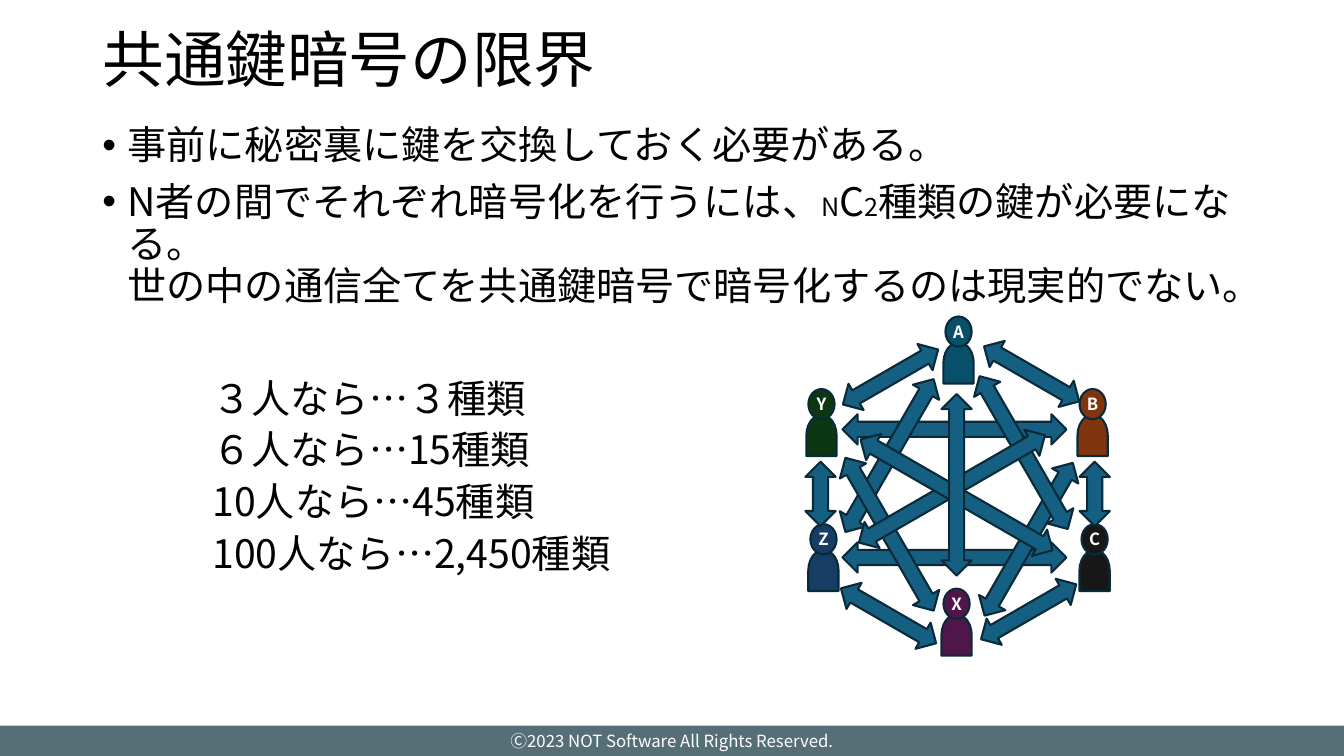
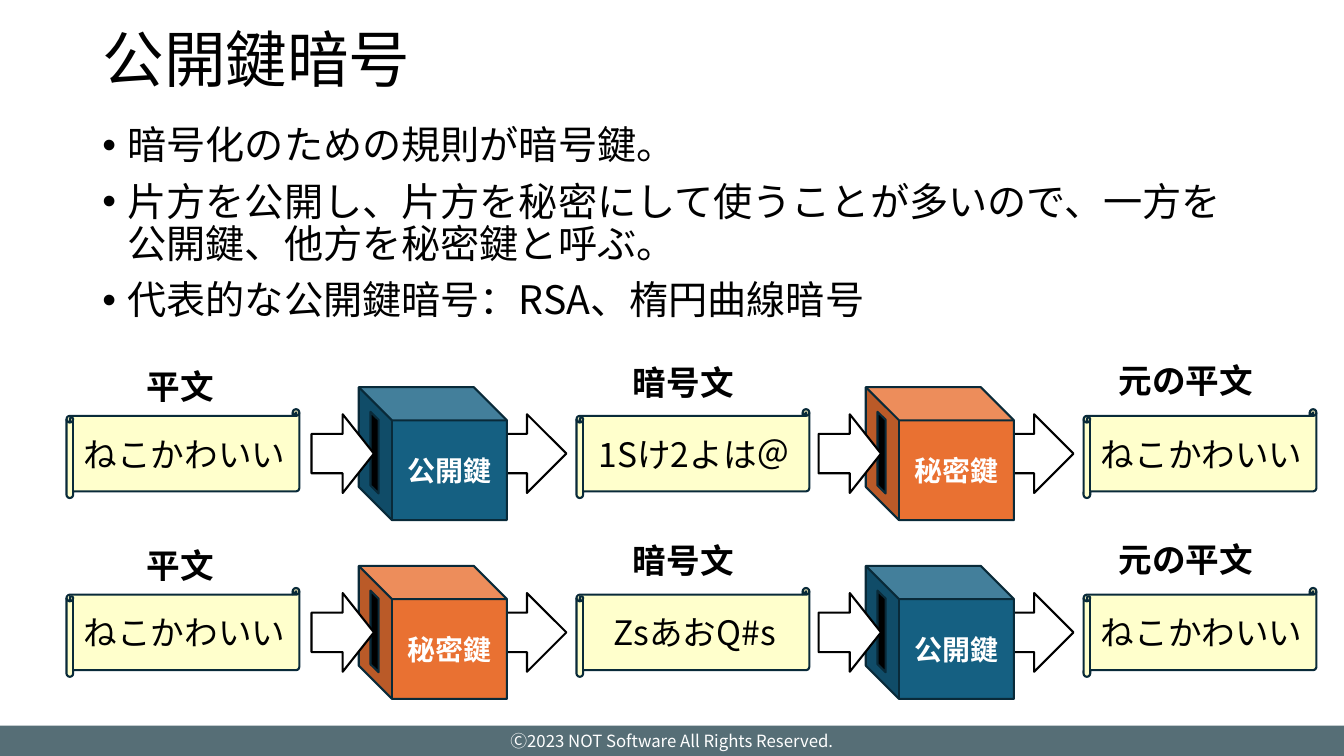
"""Build two slides on the limits of shared-key and the idea of public-key cryptography."""
from lxml import etree
from pptx import Presentation
from pptx.dml.color import RGBColor
from pptx.enum.shapes import MSO_SHAPE
from pptx.enum.text import MSO_ANCHOR, MSO_AUTO_SIZE, PP_ALIGN
from pptx.oxml.ns import qn
from pptx.util import Pt

RECTANGLE, OVAL, CUBE = MSO_SHAPE.RECTANGLE, MSO_SHAPE.OVAL, MSO_SHAPE.CUBE
DELAY, SCROLL = MSO_SHAPE.FLOWCHART_DELAY, MSO_SHAPE.HORIZONTAL_SCROLL
SLOT, RIGHT_ARROW = MSO_SHAPE.PARALLELOGRAM, MSO_SHAPE.RIGHT_ARROW
DOUBLE_ARROW = MSO_SHAPE.LEFT_RIGHT_ARROW
LEFT, CENTER = PP_ALIGN.LEFT, PP_ALIGN.CENTER
TOP, MIDDLE = MSO_ANCHOR.TOP, MSO_ANCHOR.MIDDLE
NO_AUTOFIT = MSO_AUTO_SIZE.NONE

FONT = "Noto Sans CJK JP"
COLORS = {
    "black": "000000", "white": "FFFFFF", "band": "566E76", "outline": "092A39",
    "paper": "FFFFCC", "blue": "156082", "orange": "E97132",
    "teal": "084F6A", "purple": "501649", "green": "0D3612",
    "navy": "163E64", "charcoal": "171717", "brown": "80350E",
}
SLIDE_WIDTH, SLIDE_HEIGHT, BAND_HEIGHT = 960, 540, 21.6
FOOTER = "Ⓒ2023 NOT Software All Rights Reserved."

LIMIT_TITLE = "共通鍵暗号の限界"
LIMIT_BULLETS = [
    "事前に秘密裏に鍵を交換しておく必要がある。",
    [("N者の間でそれぞれ暗号化を行うには、", 28), ("N", 18), ("C", 28), ("2", 18),
     ("種類の鍵が必要になる。\n世の中の通信全てを共通鍵暗号で暗号化するのは現実的でない。", 28)],
]
KEY_COUNTS = ["３人なら…３種類", "６人なら…15種類", "10人なら…45種類", "100人なら…2,450種類"]
PEOPLE = [
    ("A", "teal", 684.7, 236.9), ("X", "purple", 683.3, 431.3),
    ("Y", "green", 586.8, 288.7), ("Z", "navy", 588.2, 385.2),
    ("C", "charcoal", 781.9, 385.2), ("B", "brown", 780.5, 288.7),
]
KEY_ARROWS = [
    (681.8, 306.7, 160, 0), (681.8, 398.2, 160, 0),
    (635.4, 325.4, 126, 300), (734.8, 385.2, 126, 300),
    (731.2, 323.3, 126, 60), (635.4, 381.6, 126, 60),
    (736.9, 267.1, 78.5, 30), (634.7, 439.9, 78.5, 30), (636.1, 269.3, 78.5, 330),
    (781.9, 352.8, 46, 90), (586.1, 352.8, 46, 90),
    (680, 349.2, 153.4, 330), (683.3, 353.5, 158.4, 30),
    (683.3, 346.3, 129.6, 90), (734.8, 437, 78.5, 330),
]

PUBLIC_TITLE = "公開鍵暗号"
PUBLIC_BULLETS = [
    "暗号化のための規則が暗号鍵。",
    "片方を公開し、片方を秘密にして使うことが多いので、一方を公開鍵、他方を秘密鍵と呼ぶ。",
    "代表的な公開鍵暗号：RSA、楕円曲線暗号",
]
KEY_COLORS = {"公開鍵": "blue", "秘密鍵": "orange"}
FLOWS = [
    (["ねこかわいい", "1Sけ2よは＠", "ねこかわいい"], ["公開鍵", "秘密鍵"]),
    (["ねこかわいい", "ZsあおQ#s", "ねこかわいい"], ["秘密鍵", "公開鍵"]),
]
STAGE_LABELS = [("平文", 97.9, 257.8, 90.7), ("暗号文", 445, 254.7, 90.7),
                ("元の平文", 792, 253.6, 117.4)]
SCROLL_LEFTS = [47.5, 411.8, 774]
MACHINE_LEFTS = [256.3, 618.5]
FLOW_TOP, FLOW_PITCH = 276.5, 127.7


def rgb(name):
    return RGBColor.from_string(COLORS[name])


def write_text(shape, paragraphs, size=28, color="black", bold=False, align=LEFT,
               anchor=TOP, wrap=True, line_spacing=None, space_before=0, bullet=False):
    """Fill a shape with paragraphs, each a string or a list of (text, size) runs."""
    frame = shape.text_frame
    frame.auto_size, frame.word_wrap, frame.vertical_anchor = NO_AUTOFIT, wrap, anchor
    for index, content in enumerate(paragraphs):
        paragraph = frame.add_paragraph() if index else frame.paragraphs[0]
        paragraph.alignment = align
        if line_spacing:
            paragraph.line_spacing = line_spacing
        paragraph.space_before = Pt(space_before if index else 0)
        if bullet:
            properties = paragraph._p.get_or_add_pPr()
            properties.set("marL", str(Pt(18)))
            properties.set("indent", str(-Pt(18)))
            etree.SubElement(properties, qn("a:buFont")).set("typeface", "Arial")
            etree.SubElement(properties, qn("a:buChar")).set("char", "•")
        runs = [(content, size)] if isinstance(content, str) else content
        for text, run_size in runs:
            for line_number, line in enumerate(text.split("\n")):
                if line_number:
                    paragraph.add_line_break()
                run = paragraph.add_run()
                run.text = line
                font = run.font
                font.size, font.bold, font.name = Pt(run_size), bold, FONT
                font.color.rgb = rgb(color)
                etree.SubElement(run._r.get_or_add_rPr(), qn("a:ea")).set("typeface", FONT)


def add_box(shapes, kind, left, top, width, height, fill, line="outline",
            rotation=0, adjustment=None):
    shape = shapes.add_shape(kind, Pt(left), Pt(top), Pt(width), Pt(height))
    shape.shadow.inherit = False
    shape.fill.solid()
    shape.fill.fore_color.rgb = rgb(fill)
    if line:
        shape.line.color.rgb = rgb(line)
        shape.line.width = Pt(1.5)
    else:
        shape.line.fill.background()
    shape.rotation = rotation
    if adjustment is not None:
        shape.adjustments[0] = adjustment
    return shape


def add_centered(shapes, kind, x, y, width, height, fill, **options):
    return add_box(shapes, kind, x - width / 2, y - height / 2, width, height, fill, **options)


def add_text_box(slide, left, top, width, height, paragraphs, **text_format):
    box = slide.shapes.add_textbox(Pt(left), Pt(top), Pt(width), Pt(height))
    write_text(box, paragraphs, **text_format)


def add_content_slide(presentation, title, bullets, body_height):
    slide = presentation.slides.add_slide(presentation.slide_layouts[5])
    heading = slide.shapes.title
    heading.left, heading.top, heading.width, heading.height = Pt(66), Pt(15.8), Pt(828), Pt(57.6)
    write_text(heading, [title], size=44, anchor=MIDDLE, line_spacing=0.9)
    add_text_box(slide, 66, 86.4, 828, body_height, bullets,
                 line_spacing=0.9, space_before=10, bullet=True)
    return slide


def add_master_footer(presentation, slide):
    """Make the footer band and hand it to the master that all slides share."""
    band = add_box(slide.shapes, RECTANGLE, 0, SLIDE_HEIGHT - BAND_HEIGHT,
                   SLIDE_WIDTH, BAND_HEIGHT, "band", line=None)
    write_text(band, [FOOTER], size=12, color="white", align=CENTER, anchor=MIDDLE, wrap=False)
    band.element.nvSpPr.cNvPr.set("id", "100")
    presentation.slide_master.shapes.element.insert(2, band.element)


def add_person(slide, name, color, x, y):
    shapes = slide.shapes.add_group_shape().shapes
    add_centered(shapes, DELAY, x, y + 22.3, 29.5, 21.6, color, rotation=270)
    head = add_centered(shapes, OVAL, x, y, 18.7, 21.6, color)
    write_text(head, [name], size=12, color="white", bold=True,
               align=CENTER, anchor=MIDDLE, wrap=False)


def add_machine(slide, key, left, top):
    add_box(slide.shapes, RIGHT_ARROW, left + 80.6, top + 19.4, 67.7, 56.2, "white", line="black")
    shapes = slide.shapes.add_group_shape().shapes
    cube = add_box(shapes, CUBE, left, top, 105.8, 95, KEY_COLORS[key])
    cube.element.spPr.xfrm.set("flipH", "1")
    write_text(cube, [key], size=20, color="white", bold=True,
               align=CENTER, anchor=MIDDLE, wrap=False)
    add_centered(shapes, SLOT, left + 11.2, top + 46.8, 58.3, 5.8, "black",
                 rotation=270, adjustment=0.985)
    add_box(slide.shapes, RIGHT_ARROW, left - 33.8, top + 19.4, 44.6, 56.2, "white", line="black")


def add_flow(slide, messages, keys, top):
    for left, message in zip(SCROLL_LEFTS, messages):
        scroll = add_box(slide.shapes, SCROLL, left, top + 15.8, 166.3, 63.4, "paper",
                         adjustment=0.075)
        write_text(scroll, [message], size=24, align=CENTER, anchor=MIDDLE, wrap=False)
    for left, key in zip(MACHINE_LEFTS, keys):
        add_machine(slide, key, left, top)
    for label, left, label_top, width in STAGE_LABELS:
        add_text_box(slide, left, label_top + top - FLOW_TOP, width, 36, [label],
                     size=24, bold=True)


def main():
    presentation = Presentation()
    presentation.slide_width, presentation.slide_height = Pt(SLIDE_WIDTH), Pt(SLIDE_HEIGHT)

    limits = add_content_slide(presentation, LIMIT_TITLE, LIMIT_BULLETS, 139.7)
    add_master_footer(presentation, limits)
    add_text_box(limits, 144.7, 270, 344, 149, KEY_COUNTS, line_spacing=0.8, space_before=10)
    for person in PEOPLE:
        add_person(limits, *person)
    for x, y, length, angle in KEY_ARROWS:
        add_centered(limits.shapes, DOUBLE_ARROW, x, y, length, 21.6, "blue", rotation=angle)

    public = add_content_slide(presentation, PUBLIC_TITLE, PUBLIC_BULLETS, 183.6)
    for row, (messages, keys) in enumerate(FLOWS):
        add_flow(public, messages, keys, FLOW_TOP + row * FLOW_PITCH)

    presentation.save("out.pptx")


if __name__ == "__main__":
    main()
